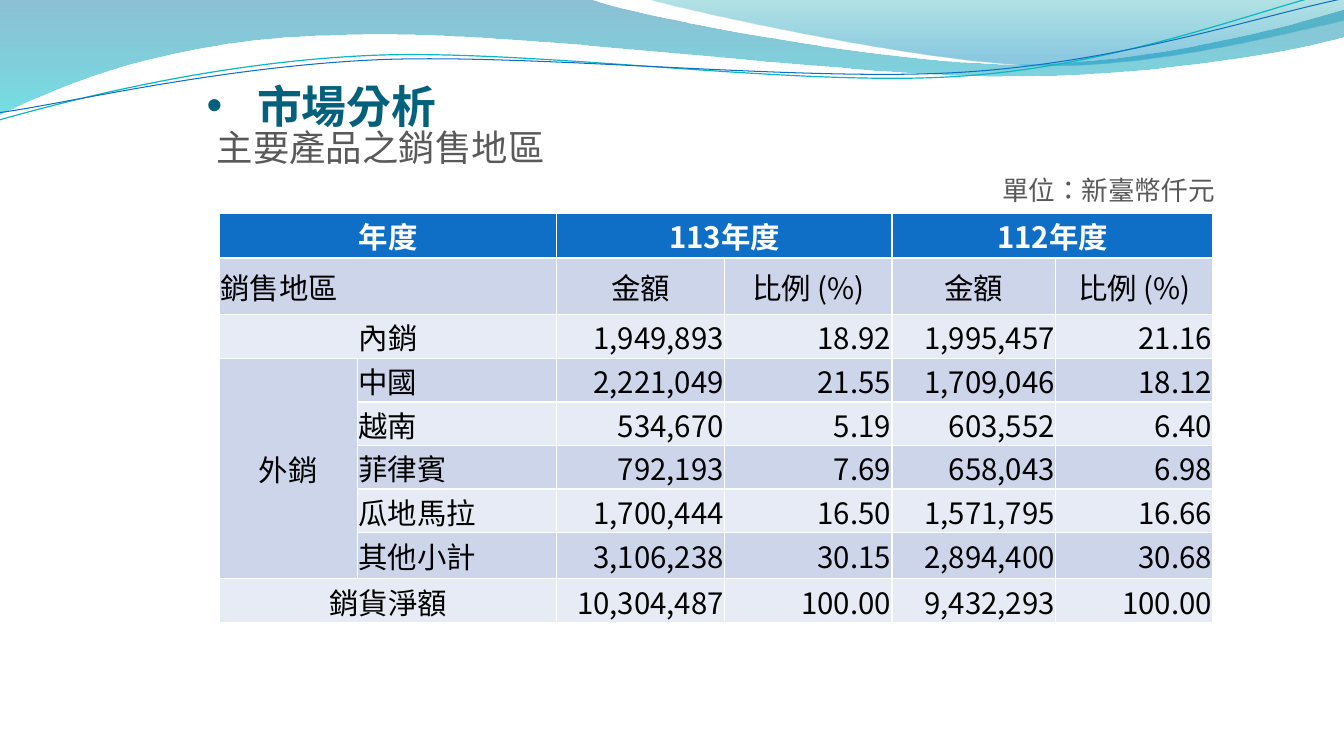
import lxml.etree
import pptx
import pptx.dml.color
import pptx.enum.text
import pptx.oxml.ns
import pptx.util

RGBColor = pptx.dml.color.RGBColor
ALIGN = pptx.enum.text.PP_ALIGN
MIDDLE = pptx.enum.text.MSO_ANCHOR.MIDDLE
TOP = pptx.enum.text.MSO_ANCHOR.TOP
qn = pptx.oxml.ns.qn

WHITE = RGBColor(0xFF, 0xFF, 0xFF)
BLACK = RGBColor(0x00, 0x00, 0x00)
GREY = RGBColor(0x59, 0x59, 0x59)
TITLE = RGBColor(0x04, 0x61, 0x7B)
BLUE = RGBColor(0x0F, 0x6F, 0xC6)
TEAL = RGBColor(0x0A, 0xB8, 0xBF)
BAND_DARK = RGBColor(0xCC, 0xD5, 0xEA)
BAND_LIGHT = RGBColor(0xE7, 0xEB, 0xF5)
WAVE_BLUE = RGBColor(0x00, 0x74, 0xA1)
WAVE_CYAN = RGBColor(0x00, 0xC6, 0xCF)
CREST_TEAL = RGBColor(0x00, 0xA1, 0xA9)
CREST_BLUE = RGBColor(0x00, 0x8B, 0xBF)

WAVE = [[(0, 0)], [(70.4, -0.1)],
        [(76.1, 2), (106.2, 7.6), (121.3, 7.6)],
        [(136.6, 7.6), (153.4, 3.1), (160, 1.1)], [(160.2, 4.3)],
        [(157.3, 5.3), (139.2, 9.1), (119.3, 9)],
        [(99.5, 9), (61.1, 3.4), (41.2, 4.1)],
        [(20.6, 4.3), (7.3, 10), (-0.1, 13.6)]]
CREST = [[(76.7, -0.1)],
         [(81.5, 1.3), (109.1, 7.4), (123, 7.8)],
         [(136.9, 8.3), (153.8, 3.8), (160, 2.5)], [(160, 0)]]
TEAL_LINE = [[(-0.1, 14.3)],
             [(7.7, 12.1), (25.3, 7.4), (44.3, 6.6)],
             [(63.2, 5.8), (94.8, 10.4), (114, 9.1)],
             [(133.2, 7.9), (150.2, 1), (159.7, -1.2)]]
BLUE_LINE = [[(0, 13.4)],
             [(7.6, 12.4), (26.2, 7.9), (45.4, 7.1)],
             [(64.4, 6.4), (95.5, 9.8), (114.6, 8.6)],
             [(133.8, 7.4), (150.6, 1.7), (160.1, -0.2)]]

SALES = [
    ["年度", "", "113年度", "", "112年度", ""],
    ["銷售地區", "", "金額", "比例 (%)", "金額", "比例 (%)"],
    ["內銷", "", "1,949,893", "18.92", "1,995,457", "21.16"],
    ["外銷", "中國", "2,221,049", "21.55", "1,709,046", "18.12"],
    ["", "越南", "534,670", "5.19", "603,552", "6.40"],
    ["", "菲律賓", "792,193", "7.69", "658,043", "6.98"],
    ["", "瓜地馬拉", "1,700,444", "16.50", "1,571,795", "16.66"],
    ["", "其他小計", "3,106,238", "30.15", "2,894,400", "30.68"],
    ["銷貨淨額", "", "10,304,487", "100.00", "9,432,293", "100.00"],
]
COLUMNS = [16.45, 23.75, 20, 19.9, 19.5, 18.7]
ROWS = [5.3, 6.75, 5.25, 5.18, 5.18, 5.18, 5.18, 5.5, 5.25]
MERGES = [(0, 0, 0, 1), (0, 2, 0, 3), (0, 4, 0, 5), (1, 0, 1, 1),
          (2, 0, 2, 1), (3, 0, 7, 0), (8, 0, 8, 1)]


class Deck:
    """Draws styled elements on one slide, measured on a grid of 160 columns by 90 rows."""

    font = "Noto Sans CJK SC"
    language = "zh-TW"
    columns = 160

    def __init__(self):
        self.prs = pptx.Presentation()
        self.prs.slide_width = pptx.util.Inches(13.33)
        self.prs.slide_height = pptx.util.Inches(7.5)
        self.s = self.prs.slides.add_slide(self.prs.slide_layouts[6])

    def grid(self, *cells):
        return [round(c * self.prs.slide_width / self.columns) for c in cells]

    def outline(self, segments, close):
        points = [self.grid(*pt) for seg in segments for pt in seg]
        builder = self.s.shapes.build_freeform(*points[0])
        builder.add_line_segments(points[1:], close=close)
        sp = builder.convert_to_shape()
        sp.shadow.inherit = False
        lines = iter(list(sp._element.spPr.iter(qn("a:lnTo"))))
        for seg in segments[1:]:
            pieces = [next(lines) for _ in seg]
            if len(pieces) == 3:
                bezier = lxml.etree.Element(qn("a:cubicBezTo"))
                pieces[0].addprevious(bezier)
                for piece in pieces:
                    bezier.append(piece[0])
                    piece.getparent().remove(piece)
        return sp

    def ribbon(self, segments, stops):
        sp = self.outline(segments, True)
        sp.line.fill.background()
        sp.fill.gradient()
        sp.fill.gradient_angle = 270
        for stop, (position, color, _) in zip(sp.fill.gradient_stops, stops):
            stop.position = position
            stop.color.rgb = color
        for clr, (_, _, opacity) in zip(sp._element.spPr.iter(qn("a:srgbClr")), stops):
            lxml.etree.SubElement(clr, qn("a:alpha"), val=str(opacity * 1000))

    def curve(self, segments, color, width):
        sp = self.outline(segments, False)
        sp.fill.background()
        sp.line.color.rgb = color
        sp.line.width = pptx.util.Pt(width)

    def style(self, p, size, color, bold=False, align=ALIGN.LEFT):
        p.alignment = align
        for r in p.runs:
            r.font.size = pptx.util.Pt(size)
            r.font.name = self.font
            r.font.bold = bold
            r.font.color.rgb = color
            rPr = r._r.get_or_add_rPr()
            rPr.set("lang", self.language)
            lxml.etree.SubElement(rPr, qn("a:ea"), typeface=self.font)

    def text(self, box, lines, anchor=TOP, inset=1.2):
        tf = self.s.shapes.add_textbox(*self.grid(*box)).text_frame
        tf.word_wrap = True
        tf.vertical_anchor = anchor
        tf.margin_left = tf.margin_right = self.grid(inset)[0]
        tf.text = "\n".join(line for line, _ in lines)
        for p, (_, look) in zip(tf.paragraphs, lines):
            self.style(p, **look)
        return tf

    def bullet(self, p, indent):
        pPr = p._p.get_or_add_pPr()
        width = self.grid(indent)[0]
        pPr.set("marL", str(width))
        pPr.set("indent", str(-width))
        lxml.etree.SubElement(pPr, qn("a:buFont"), typeface="Arial")
        lxml.etree.SubElement(pPr, qn("a:buChar"), char="•")

    def space_before(self, p, percent):
        spcBef = lxml.etree.SubElement(p._p.get_or_add_pPr(), qn("a:spcBef"))
        lxml.etree.SubElement(spcBef, qn("a:spcPct"), val=str(percent * 1000))

    def borders(self, cell, widths):
        tcPr = cell._tc.get_or_add_tcPr()
        for i, (side, width) in enumerate(zip("LRTB", widths)):
            ln = lxml.etree.Element(qn("a:ln" + side), w=str(pptx.util.Pt(width)))
            fill = lxml.etree.SubElement(ln, qn("a:solidFill"))
            lxml.etree.SubElement(fill, qn("a:srgbClr"), val=str(WHITE))
            tcPr.insert(i, ln)

    def table(self, left, top, columns, rows, data, merges):
        box = self.grid(left, top, sum(columns), sum(rows))
        tbl = self.s.shapes.add_table(len(rows), len(columns), *box).table
        for col, width in zip(tbl.columns, self.grid(*columns)):
            col.width = width
        for row, height in zip(tbl.rows, self.grid(*rows)):
            row.height = height
        for r0, c0, r1, c1 in merges:
            tbl.cell(r0, c0).merge(tbl.cell(r1, c1))
        for r, values in enumerate(data):
            header = r == 0
            for c, value in enumerate(values):
                cell = tbl.cell(r, c)
                cell.text = value
                cell.vertical_anchor = MIDDLE
                cell.margin_left = cell.margin_right = cell.margin_top = pptx.util.Inches(0.01)
                cell.margin_bottom = 0
                cell.fill.solid()
                cell.fill.fore_color.rgb = BLUE if header else BAND_DARK if r % 2 else BAND_LIGHT
                self.borders(cell, (1, 1, 1.5 if r == 1 else 1, 1.5 if header else 1))
                if c == 1 or (r, c) == (1, 0):
                    align = ALIGN.LEFT
                elif r < 2 or c == 0:
                    align = ALIGN.CENTER
                else:
                    align = ALIGN.RIGHT
                self.style(cell.text_frame.paragraphs[0], 21,
                           WHITE if header else BLACK, header, align)


def main():
    deck = Deck()
    deck.ribbon(WAVE, [(0, WAVE_BLUE, 45), (1, WAVE_CYAN, 55)])
    deck.ribbon(CREST, [(0, CREST_TEAL, 30), (0.8, CREST_BLUE, 45)])
    deck.curve(TEAL_LINE, TEAL, 0.85)
    deck.curve(BLUE_LINE, BLUE, 0.75)

    title = deck.text((24.6, 7, 120.2, 10.5),
                      [("市場分析", dict(size=32, color=TITLE, bold=True))], MIDDLE, 0)
    title.margin_bottom = 0
    deck.bullet(title.paragraphs[0], 6)

    body = deck.text((24.6, 14.3, 121.2, 11.4), [
        ("主要產品之銷售地區", dict(size=26, color=GREY)),
        ("單位：新臺幣仟元", dict(size=19, color=GREY, align=ALIGN.RIGHT))])
    for p in body.paragraphs:
        deck.space_before(p, 20)

    deck.table(26.1, 25.4, COLUMNS, ROWS, SALES, MERGES)
    deck.prs.save("out.pptx")


if __name__ == "__main__":
    main()
